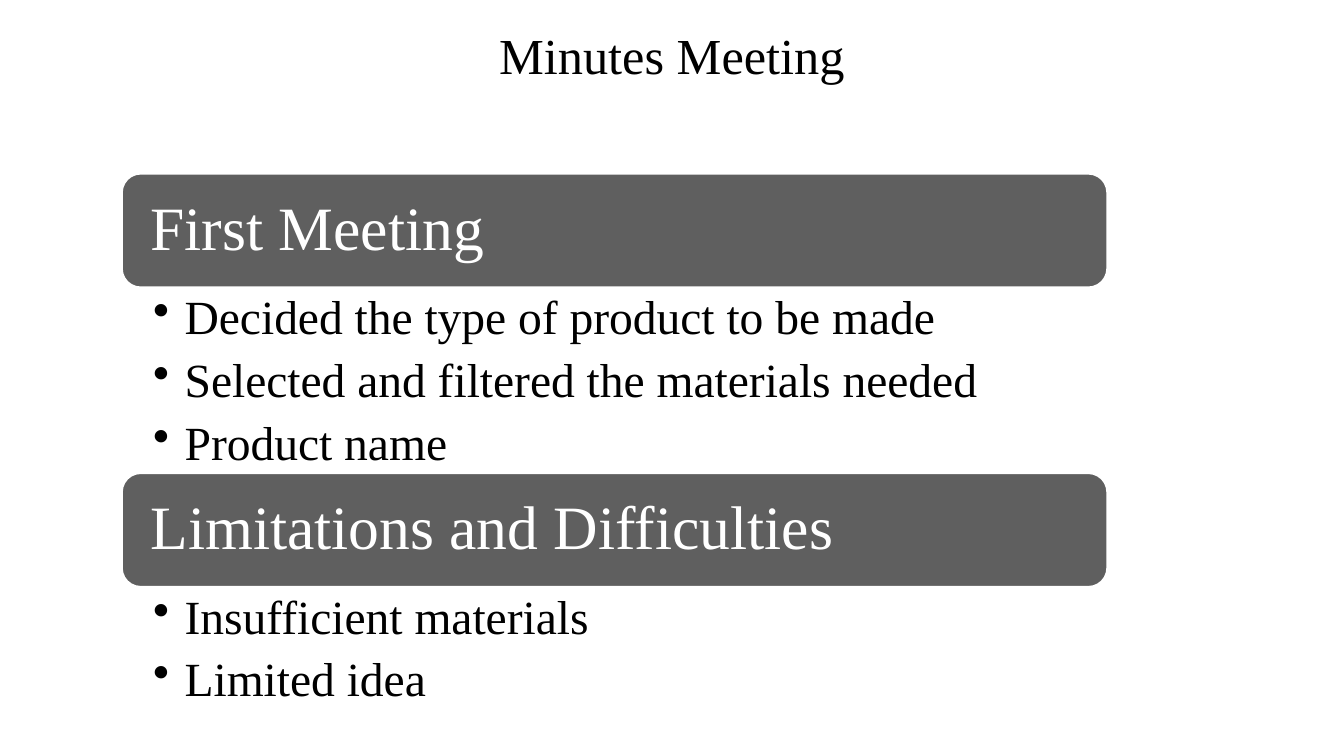
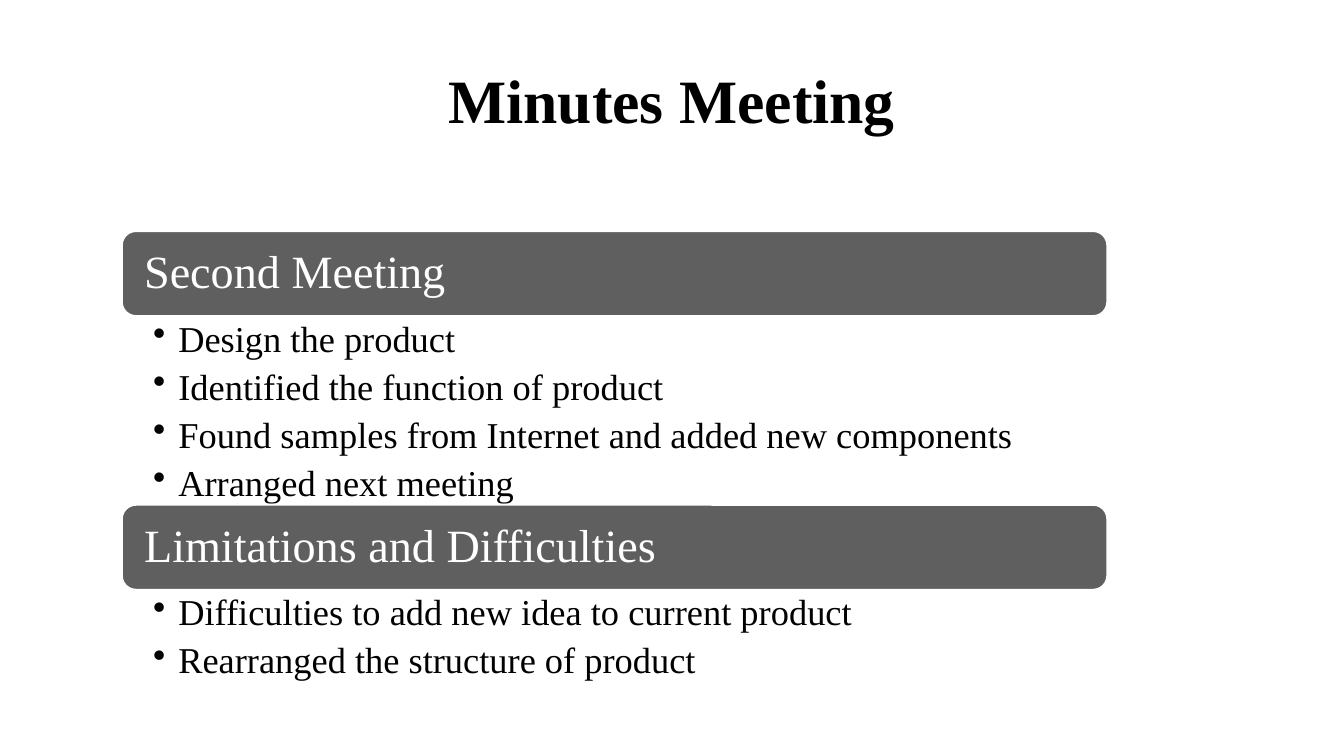
from lxml.etree import SubElement
from pptx import Presentation
from pptx.dml.color import RGBColor
from pptx.enum.shapes import MSO_SHAPE
from pptx.enum.text import MSO_ANCHOR, PP_ALIGN
from pptx.oxml.ns import qn
from pptx.util import Pt

LIMITS = "Limitations and Difficulties"

SLIDES = [
    {
        "title": "Minutes Meeting", "title top": 16, "title size": 36, "bold": False,
        "top": 124, "band": 81.4, "band size": 44, "band inset": 16.6,
        "size": 34, "indent": 22.5, "inset": 4.3,
        "parts": [
            ("First Meeting", 132.5, [
                "Decided the type of product to be made",
                "Selected and filtered the materials needed",
                "Product name",
            ]),
            (LIMITS, 88, ["Insufficient materials", "Limited idea"]),
        ],
    },
    {
        "title": "Minutes Meeting", "title top": 47.5, "title size": 44, "bold": True,
        "top": 165, "band": 60.8, "band size": 33, "band inset": 13,
        "size": 26, "indent": 18, "inset": 3.3,
        "parts": [
            ("Second Meeting", 134.7, [
                "Design the product",
                "Identified the function of product",
                "Found samples from Internet and added new components",
                "Arranged next meeting",
            ]),
            (LIMITS, 67, [
                "Difficulties to add new idea to current product",
                "Rearranged the structure of product",
            ]),
        ],
    },
]

FONT = "Times New Roman"
BLACK = RGBColor(0, 0, 0)
WHITE = RGBColor(255, 255, 255)
GREY = RGBColor(0x5F, 0x5F, 0x5F)
LEFT, WIDTH = 87, 704
PAD = 22.4      # left inset of the bullet lists
GAP = 0.24      # space after a bullet, as a share of its text size


def style(para, size, color, bold=False):
    for run in para.runs:
        font = run.font
        font.name, font.size, font.bold = FONT, Pt(size), bold
        font.color.rgb = color


def set_frame(frame, anchor, left=0, top=0):
    frame.word_wrap = True
    frame.vertical_anchor = anchor
    frame.margin_left = frame.margin_right = Pt(left)
    frame.margin_top = frame.margin_bottom = Pt(top)


def add_title(slide, data):
    box = slide.shapes.add_textbox(Pt(48), Pt(data["title top"]), Pt(864), Pt(46))
    frame = box.text_frame
    set_frame(frame, MSO_ANCHOR.MIDDLE)
    frame.text = data["title"]
    para = frame.paragraphs[0]
    para.alignment = PP_ALIGN.CENTER
    style(para, data["title size"], BLACK, data["bold"])


def add_band(slide, top, text, data):
    band = slide.shapes.add_shape(
        MSO_SHAPE.ROUNDED_RECTANGLE, Pt(LEFT), Pt(top), Pt(WIDTH), Pt(data["band"]))
    band.shadow.inherit = False
    band.fill.solid()
    band.fill.fore_color.rgb = GREY
    band.line.color.rgb = WHITE
    band.line.width = Pt(1.5)
    frame = band.text_frame
    set_frame(frame, MSO_ANCHOR.MIDDLE, data["band inset"])
    frame.text = text
    para = frame.paragraphs[0]
    para.alignment = PP_ALIGN.LEFT
    para.line_spacing = 0.9
    style(para, data["band size"], WHITE)


def add_list(slide, top, height, items, data):
    box = slide.shapes.add_textbox(Pt(LEFT), Pt(top), Pt(WIDTH), Pt(height))
    frame = box.text_frame
    set_frame(frame, MSO_ANCHOR.TOP, PAD, data["inset"])
    frame.text = "\n".join(items)
    for para in frame.paragraphs:
        para.line_spacing = 0.9
        para.space_after = Pt(round(data["size"] * GAP, 1))
        props = para._p.get_or_add_pPr()
        props.set("marL", str(Pt(data["indent"])))
        props.set("indent", str(-Pt(data["indent"])))
        SubElement(props, qn("a:buChar")).set("char", "•")
        style(para, data["size"], BLACK)


def main():
    deck = Presentation()
    deck.slide_width, deck.slide_height = Pt(960), Pt(540)
    for data in SLIDES:
        slide = deck.slides.add_slide(deck.slide_layouts[6])
        add_title(slide, data)
        top = data["top"]
        for head, height, items in data["parts"]:
            add_band(slide, top, head, data)
            top += data["band"]
            add_list(slide, top, height, items, data)
            top += height
    deck.save("out.pptx")


if __name__ == "__main__":
    main()
